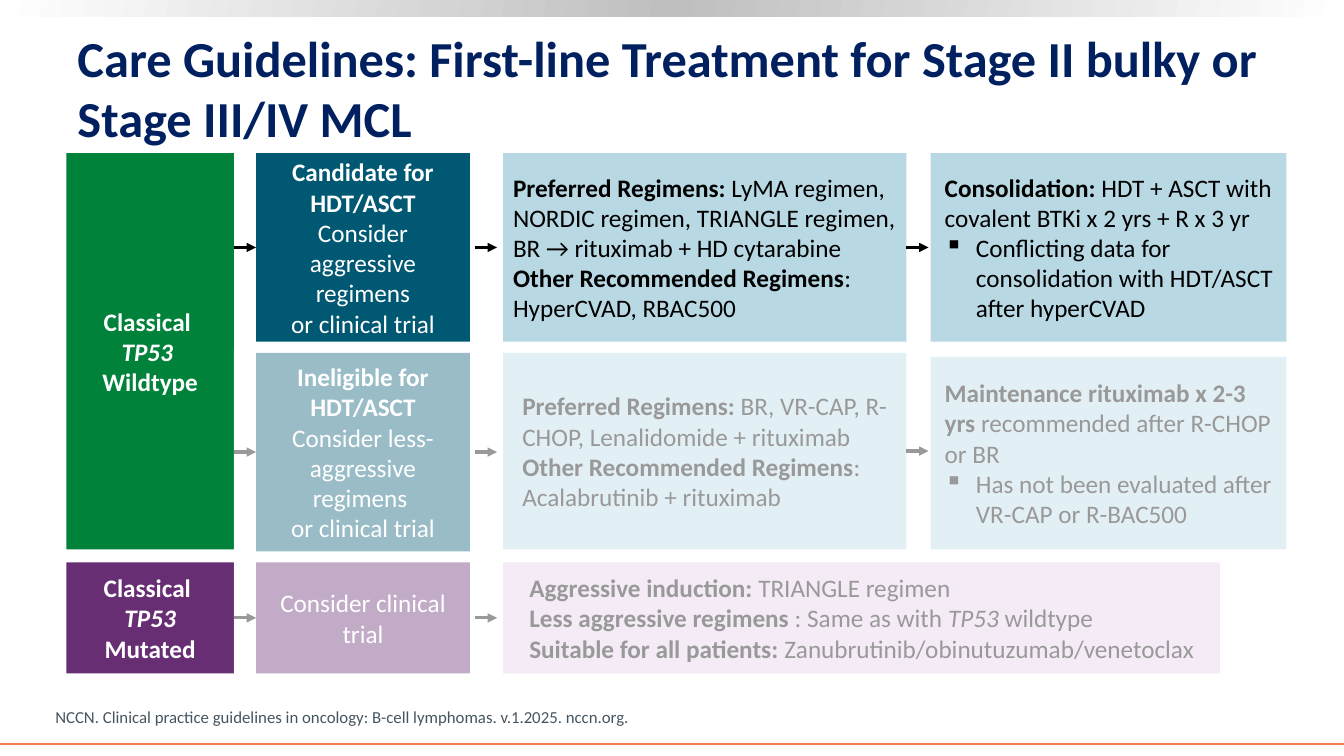
from copy import deepcopy
from dataclasses import dataclass
from typing import Optional

from lxml.etree import SubElement
from pptx import Presentation
from pptx.dml.color import RGBColor
from pptx.enum.shapes import MSO_CONNECTOR as Connector, MSO_SHAPE as Preset
from pptx.enum.text import MSO_ANCHOR as Anchor, PP_ALIGN as Align
from pptx.oxml.ns import qn
from pptx.util import Inches, Pt


@dataclass(frozen=True)
class Theme:
    font: str = "Calibri"
    title_size: int = 36
    body_size: int = 18
    source_size: int = 12
    title: str = "002060"
    source: str = "455560"
    white: str = "FFFFFF"
    black: str = "000000"
    silver: str = "BFBFBF"
    orange: str = "F47D55"
    green: str = "00823B"
    purple: str = "682E74"
    lilac: str = "E6CDEB"
    teal: str = "015873"
    sky: str = "B8D9E4"


THEME = Theme()


@dataclass(frozen=True)
class Run:
    text: str
    bold: bool = False
    italic: bool = False


@dataclass(frozen=True)
class Para:
    runs: tuple[Run, ...]
    bullet: bool = False


@dataclass(frozen=True)
class Area:
    left: float
    top: float
    width: float
    height: float

    def inches(self):
        return [Inches(v) for v in (self.left, self.top, self.width, self.height)]


@dataclass(frozen=True)
class Step:
    area: Area
    fill: str
    paras: tuple[Para, ...]
    ink: str = THEME.black
    align: Align = Align.LEFT
    inset: float = 0.1


@dataclass(frozen=True)
class Arrow:
    left: float
    row: str
    begin: Optional[str] = None
    end: Optional[str] = None


def para(*runs: Run, bullet: bool = False) -> Para:
    return Para(runs, bullet)


def bold(text: str, italic: bool = False) -> Run:
    return Run(text, True, italic)


def group(area: Area, fill: str, *paras: Para) -> Step:
    return Step(area, fill, paras, THEME.white, Align.CENTER, 0.15)


def regimens(area: Area, preferred: str, other: str, inset: float) -> Step:
    return Step(area, THEME.sky, (
        para(bold("Preferred Regimens: "), Run(preferred)),
        para(bold("Other Recommended Regimens"), Run(f": {other}")),
    ), inset=inset)


def follow_up(area: Area, lead: str, rest: str, note: str) -> Step:
    return Step(area, THEME.sky, (
        para(bold(lead), Run(rest)), para(Run(note), bullet=True),
    ), inset=0.14)


GROUP_X, CHOICE_X, REGIMEN_X, FOLLOW_X = 0.66, 2.54, 4.99, 9.23
TOP, MIDDLE, BOTTOM = 1.52, 3.5, 5.58

STEPS = {
    "wildtype": group(
        Area(GROUP_X, TOP, 1.66, 3.93), THEME.green, para(bold("Classical ")),
        para(bold("TP53 ", True)), para(bold("Wildtype"))),
    "mutated": group(
        Area(GROUP_X, BOTTOM, 1.66, 1.1), THEME.purple, para(bold("Classical ")),
        para(bold("TP53", True), bold(" Mutated"))),
    "candidate": group(
        Area(CHOICE_X, TOP, 2.12, 1.87), THEME.teal, para(bold("Candidate for HDT/ASCT")),
        para(Run("Consider aggressive regimens")), para(Run("or clinical trial"))),
    "ineligible": group(
        Area(CHOICE_X, MIDDLE, 2.12, 1.97), THEME.teal, para(bold("Ineligible for HDT/ASCT")),
        para(Run("Consider less-aggressive regimens ")), para(Run("or clinical trial"))),
    "trial": group(
        Area(CHOICE_X, BOTTOM, 2.12, 1.1), THEME.purple,
        para(Run("Consider clinical trial"))),
    "intensive": regimens(
        Area(REGIMEN_X, TOP, 4, 1.87),
        "LyMA regimen, NORDIC regimen, TRIANGLE regimen, BR → rituximab + HD cytarabine",
        "HyperCVAD, RBAC500", 0.1),
    "gentle": regimens(
        Area(REGIMEN_X, MIDDLE, 4, 1.95),
        "BR, VR-CAP, R-CHOP, Lenalidomide + rituximab",
        "Acalabrutinib + rituximab", 0.19),
    "consolidation": follow_up(
        Area(FOLLOW_X, TOP, 3.53, 1.87), "Consolidation:",
        " HDT + ASCT with covalent BTKi x 2 yrs + R x 3 yr",
        "Conflicting data for consolidation with HDT/ASCT after hyperCVAD"),
    "maintenance": follow_up(
        Area(FOLLOW_X, 3.54, 3.53, 1.91), "Maintenance rituximab x 2-3 yrs",
        " recommended after R-CHOP or BR",
        "Has not been evaluated after VR-CAP or R-BAC500"),
    "mutated_options": Step(Area(REGIMEN_X, BOTTOM, 7.11, 1.1), THEME.lilac, (
        para(bold("Aggressive induction: "), Run("TRIANGLE regimen")),
        para(bold("Less aggressive regimens"), Run(" : Same as with "),
             Run("TP53", italic=True), Run(" wildtype")),
        para(bold("Suitable for all patients: "),
             Run("Zanubrutinib/obinutuzumab/venetoclax")),
    ), inset=0.26),
}

ARROWS = (
    Arrow(2.32, "candidate", end="candidate"),
    Arrow(2.32, "ineligible", end="ineligible"),
    Arrow(2.32, "mutated", begin="mutated", end="trial"),
    Arrow(4.71, "candidate"),
    Arrow(4.71, "ineligible"),
    Arrow(4.71, "trial"),
    Arrow(8.99, "intensive", begin="intensive"),
    Arrow(8.99, "gentle", begin="gentle"),
)


def rgb(color: str) -> RGBColor:
    return RGBColor.from_string(color)


def write(shape, paras: tuple[Para, ...], size: int, ink: str,
          align: Align = Align.LEFT, inset: float = 0.1, anchor: Anchor = Anchor.MIDDLE) -> None:
    frame = shape.text_frame
    frame.word_wrap = True
    frame.vertical_anchor = anchor
    frame.margin_left = Inches(inset)
    frame.margin_right = Inches(min(inset, 0.1) if align == Align.LEFT else inset)
    for index, item in enumerate(paras):
        line = frame.paragraphs[0] if index == 0 else frame.add_paragraph()
        line.alignment = align
        if item.bullet:
            props = line._p.get_or_add_pPr()
            props.set("marL", str(Inches(0.31)))
            props.set("indent", str(Inches(-0.31)))
            SubElement(props, qn("a:buChar"), char="▪")
        for part in item.runs:
            run = line.add_run()
            run.text = part.text
            run.font.name = THEME.font
            run.font.size = Pt(size)
            run.font.bold = part.bold
            run.font.italic = part.italic
            run.font.color.rgb = rgb(ink)


def block(slide, area: Area, color: str):
    shape = slide.shapes.add_shape(Preset.RECTANGLE, *area.inches())
    shape.shadow.inherit = False
    shape.fill.solid()
    shape.fill.fore_color.rgb = rgb(color)
    shape.line.fill.background()
    return shape


def rule(slide, left: float, right: float, y: float, color: str, weight: float):
    line = slide.shapes.add_connector(
        Connector.STRAIGHT, Inches(left), Inches(y), Inches(right), Inches(y))
    line.line.color.rgb = rgb(color)
    line.line.width = Pt(weight)
    SubElement(line._element.spPr, qn("a:effectLst"))
    return line


def top_band(slide) -> None:
    fill = block(slide, Area(0, 0, 13.33, 0.16), THEME.white).fill
    fill.gradient()
    fill.gradient_angle = 170
    first = fill.gradient_stops[0]._gs
    first.addnext(deepcopy(first))
    for stop, place, color in zip(fill.gradient_stops, (0, 0.5, 1),
                                  (THEME.white, THEME.silver, THEME.white)):
        stop.position = place
        stop.color.rgb = rgb(color)


def draw_arrow(slide, arrow: Arrow, boxes: dict) -> None:
    row = STEPS[arrow.row].area
    line = rule(slide, arrow.left, arrow.left + 0.22, row.top + row.height / 2,
                THEME.black, 2.25)
    SubElement(line.line._get_or_add_ln(), qn("a:tailEnd"), type="triangle")
    if arrow.begin:
        line.begin_connect(boxes[arrow.begin], 3)
    if arrow.end:
        line.end_connect(boxes[arrow.end], 1)


def main() -> None:
    deck = Presentation()
    deck.slide_width, deck.slide_height = Inches(13.33), Inches(7.5)
    slide = deck.slides.add_slide(deck.slide_layouts[6])
    top_band(slide)
    rule(slide, 0, 13.33, 7.38, THEME.orange, 1.5)
    title = slide.shapes.add_textbox(*Area(0.67, 0.26, 12.18, 1.21).inches())
    write(title, (para(bold("Care Guidelines: First-line Treatment for Stage II bulky or "
                            "Stage III/IV MCL")),), THEME.title_size, THEME.title)
    boxes = {}
    for key, step in STEPS.items():
        boxes[key] = block(slide, step.area, step.fill)
        write(boxes[key], step.paras, THEME.body_size, step.ink, step.align, step.inset)
    for arrow in ARROWS:
        draw_arrow(slide, arrow, boxes)
    source = slide.shapes.add_textbox(*Area(0.45, 6.96, 7.72, 0.3).inches())
    write(source, (para(Run("NCCN. Clinical practice guidelines in oncology: B-cell lymphomas. "
                            "v.1.2025. nccn.org.")),),
          THEME.source_size, THEME.source, anchor=Anchor.BOTTOM)
    veil = block(slide, Area(2.32, 3.44, 10.7, 3.31), THEME.white)
    SubElement(veil.fill._xPr.find(f".//{qn('a:srgbClr')}"), qn("a:alpha"), val="60000")
    deck.save("out.pptx")


if __name__ == "__main__":
    main()
